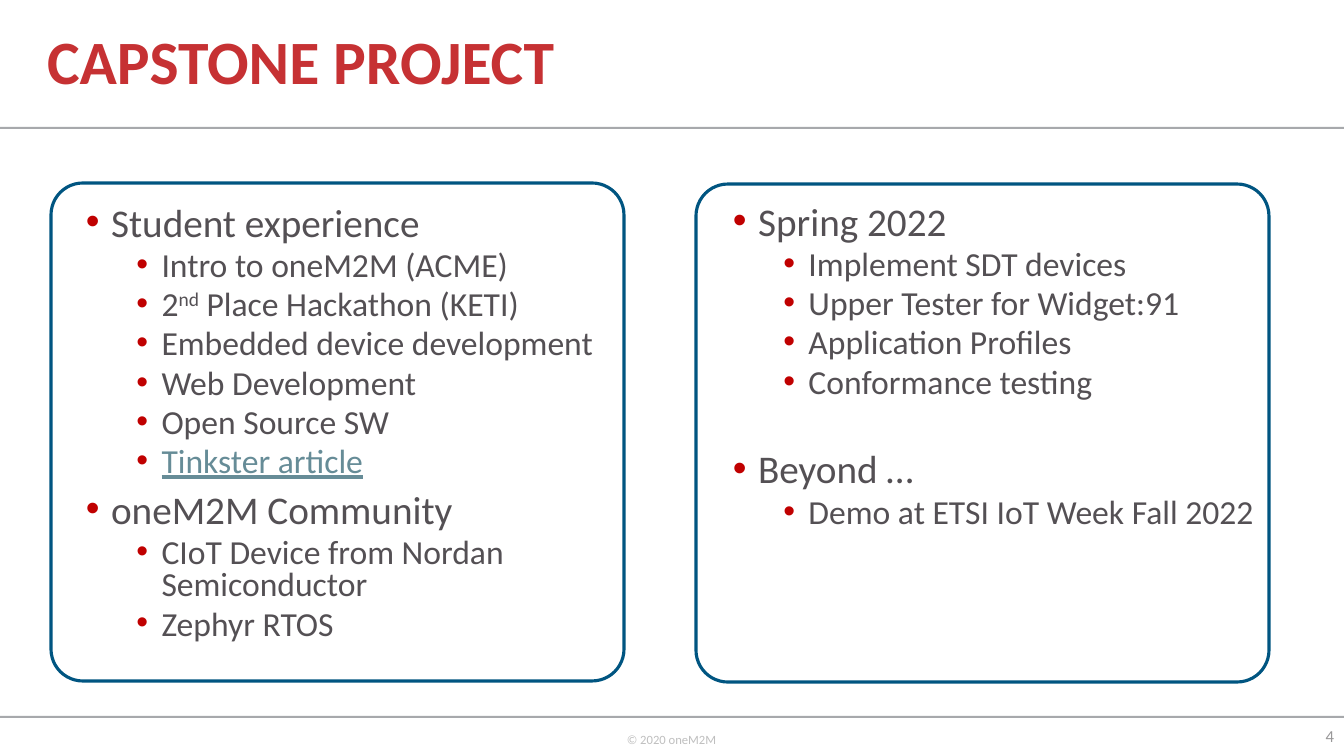
from pptx import Presentation
from pptx.dml.color import RGBColor
from pptx.enum.shapes import MSO_SHAPE as SHAPE
from pptx.enum.text import MSO_ANCHOR as ANCHOR, MSO_AUTO_SIZE as AUTO, PP_ALIGN as ALIGN
from pptx.oxml import parse_xml
from pptx.oxml.ns import nsdecls
from pptx.util import Emu, Pt

PX = 914400 / 100.8
RED = RGBColor(0xC6, 0x31, 0x33)
BLUE = RGBColor(0x00, 0x55, 0x81)
TEXT = RGBColor(0x54, 0x50, 0x54)
LINK = RGBColor(0x66, 0x8C, 0x97)
RULE = RGBColor(0xA7, 0xA9, 0xAC)
PALE = RGBColor(0xBF, 0xBF, 0xBF)
GREY = RGBColor(0x99, 0x98, 0x99)


def box(*lengths):
    return [Emu(round(n * PX)) for n in lengths]


def style(r, size, color):
    r.font.name = "Calibri"
    r.font.size = Pt(size)
    r.font.color.rgb = color


prs = Presentation()
prs.slide_width, prs.slide_height = box(1344, 756)
s = prs.slides.add_slide(prs.slide_layouts[5])

for top in (127, 716):
    sp = s.shapes.add_shape(SHAPE.RECTANGLE, *box(0, top, 1344, 2))
    sp.shadow.inherit = False
    sp.fill.solid()
    sp.fill.fore_color.rgb = RULE
    sp.line.fill.background()

title = s.shapes.title
title.left, title.top, title.width, title.height = box(37, 0, 866, 129)
tf = title.text_frame
tf.text = "CAPSTONE PROJECT"
tf.auto_size = AUTO.NONE
tf.vertical_anchor = ANCHOR.MIDDLE
p = tf.paragraphs[0]
p.alignment = ALIGN.LEFT
p.line_spacing = 0.9
style(p.runs[0], 44, RED)
p.runs[0].font.bold = True

experience = [
    (0, "Student experience"),
    (1, "Intro to oneM2M (ACME)"),
    (1, "2|nd| Place Hackathon (KETI)"),
    (1, "Embedded device development"),
    (1, "Web Development"),
    (1, "Open Source SW"),
    (1, "Tinkster article"),
    (0, "oneM2M Community"),
    (1, "CIoT Device from Nordan Semiconductor"),
    (1, "Zephyr RTOS"),
]
plans = [
    (0, "Spring 2022"),
    (1, "Implement SDT devices"),
    (1, "Upper Tester for Widget:91"),
    (1, "Application Profiles"),
    (1, "Conformance testing"),
    (0, "Beyond …"),
    (1, "Demo at ETSI IoT Week Fall 2022"),
]
panels = [(51, 183, 76, 202, experience), (696, 184, 723, 201, plans)]

for left, top, text_left, text_top, items in panels:
    sp = s.shapes.add_shape(SHAPE.ROUNDED_RECTANGLE, *box(left, top, 573, 498))
    sp.shadow.inherit = False
    sp.adjustments[0] = 0.064
    sp.fill.background()
    sp.line.color.rgb = BLUE
    sp.line.width = Pt(2.25)

    tf = s.shapes.add_textbox(*box(text_left, text_top, 572, 480)).text_frame
    tf.word_wrap = True
    for i, (level, text) in enumerate(items):
        p = tf.paragraphs[0] if i == 0 else tf.add_paragraph()
        p.level = level
        pPr = p._p.get_or_add_pPr()
        pPr.set("marL", str(228600 + 457200 * level))
        pPr.set("indent", "-228600")
        for xml in (
            '<a:buClr %s><a:srgbClr val="C00000"/></a:buClr>',
            '<a:buFont %s typeface="Arial"/>',
            '<a:buChar %s char="•"/>',
        ):
            pPr.append(parse_xml(xml % nsdecls("a")))
        p.line_spacing = 0.8
        if i:
            p.space_before = Pt(5 if level else 10)
        if text == "Beyond …":
            p.space_before = Pt(38)
        for k, part in enumerate(text.split("|")):
            r = p.add_run()
            r.text = part
            style(r, 24 if level else 28, TEXT)
            if k == 1:
                r._r.get_or_add_rPr().set("baseline", "30000")
            if text == "Tinkster article":
                r.font.color.rgb = LINK
                r.font.underline = True

tf = s.shapes.add_textbox(*box(617, 727, 113, 40)).text_frame
tf.text = "© 2020 oneM2M"
style(tf.paragraphs[0].runs[0], 9, PALE)

tf = s.shapes.add_textbox(*box(1289, 716, 55, 40)).text_frame
tf.text = "4"
tf.vertical_anchor = ANCHOR.MIDDLE
tf.word_wrap = True
tf.paragraphs[0].alignment = ALIGN.RIGHT
style(tf.paragraphs[0].runs[0], 12, GREY)

prs.save("out.pptx")
